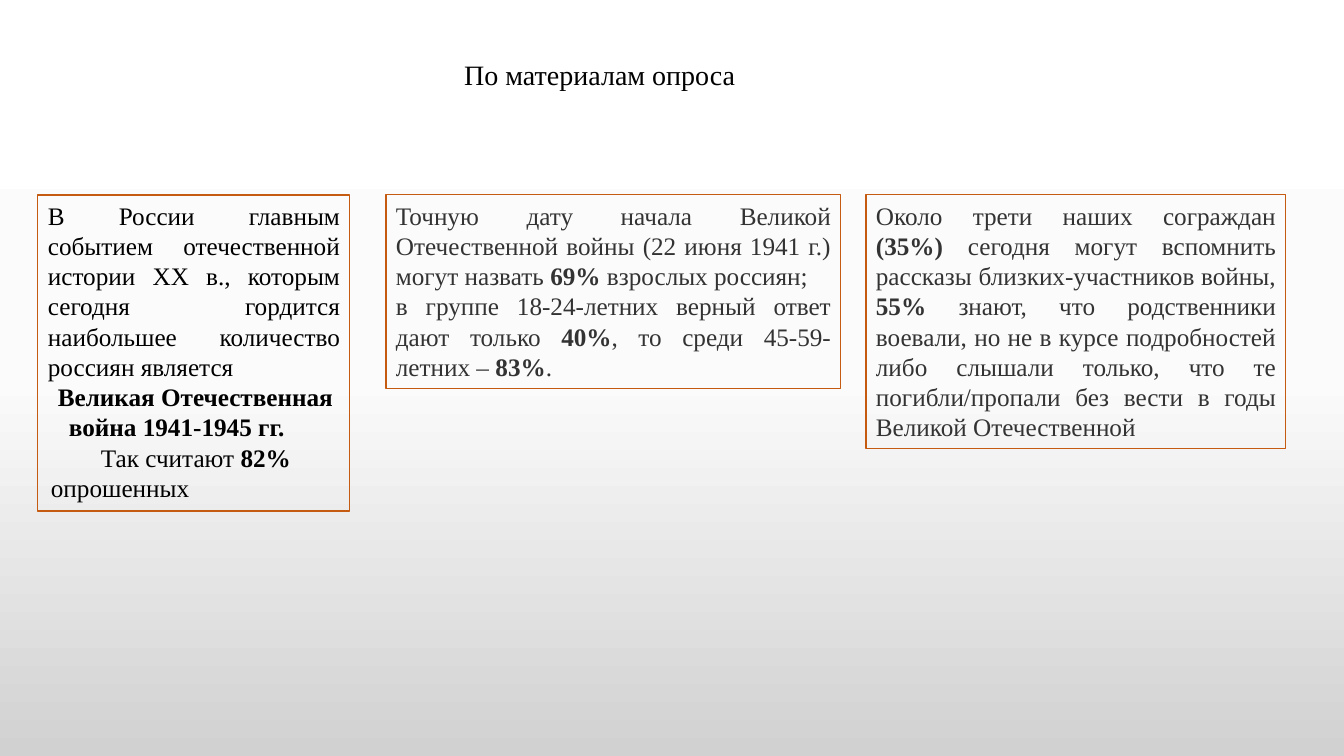
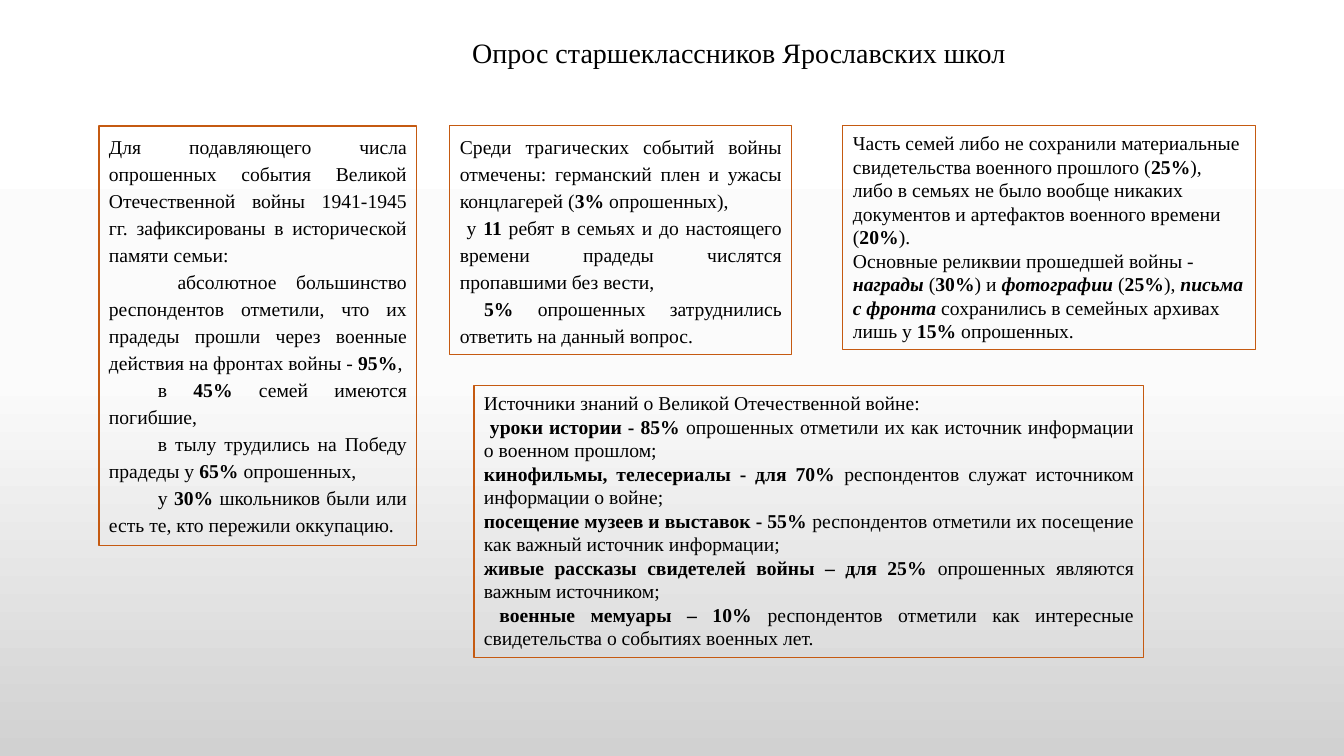
from copy import deepcopy
from pptx import Presentation, util as u
from pptx.dml.color import RGBColor
from pptx.enum import shapes, text

PX = 914400 / 100.8
FONT = "Times New Roman"
EDGE, BLACK, GREY = "C55A11", "000000", "333333"
LEFT, JUST = text.PP_ALIGN.LEFT, text.PP_ALIGN.JUSTIFY


def px(n):
    return u.Emu(round(n * PX))


def write(para, line, size, color):
    """Fill a paragraph; *...* marks bold, */...* bold italic."""
    for i, part in enumerate(line.split("*")):
        if not part:
            continue
        run = para.add_run()
        run.text = part.removeprefix("/") if i % 2 else part
        font = run.font
        font.name, font.size = FONT, u.Pt(size)
        font.bold = bool(i % 2)
        font.italic = bool(i % 2) and part.startswith("/")
        font.color.rgb = RGBColor.from_string(color)


prs = Presentation()
prs.slide_width, prs.slide_height = px(1344), px(756)

# Shared background: white fading to grey
back = prs.slide_master.background.fill
back.gradient()
back.gradient_angle = 270
stops = prs.slide_master.element.find(".//{*}gsLst")
stops.insert(1, deepcopy(stops[0]))
for stop, (pos, tone) in zip(back.gradient_stops,
                             [(0, "FFFFFF"), (0.5, "FBFBFB"), (1, "D1D1D1")]):
    stop.position = pos
    stop.color.rgb = RGBColor.from_string(tone)

# Box: place, colour, alignment, line spacing, paragraphs.
# A paragraph is its text, or text with left margin and first-line indent.
survey = [
    ((38, 195, 312, 316), BLACK, JUST, 1, [
        "В России главным событием отечественной истории ХХ в., которым "
        "сегодня гордится наибольшее количество россиян является ",
        ("*Великая Отечественная война 1941-1945 гг.*", 21, -11),
        ("Так считают *82% *опрошенных", 3, 50),
    ]),
    ((386, 195, 455, 194), GREY, JUST, 1, [
        "Точную дату начала Великой Отечественной войны (22 июня 1941 г.) "
        "могут назвать *69%* взрослых россиян;",
        "в группе 18-24-летних верный ответ дают только *40%*, то среди "
        "45-59-летних – *83%*. ",
    ]),
    ((866, 195, 420, 254), GREY, JUST, 1, [
        "Около трети наших сограждан *(35%) *сегодня могут вспомнить рассказы "
        "близких-участников войны, *55%* знают, что родственники воевали, но "
        "не в курсе подробностей либо слышали только, что те погибли/пропали "
        "без вести в годы Великой Отечественной",
    ]),
]
school = [
    ((99, 126, 318, 420), BLACK, JUST, 1.15, [
        "Для подавляющего числа опрошенных события Великой Отечественной войны "
        "1941-1945 гг. зафиксированы в исторической памяти семьи:",
        (" абсолютное большинство респондентов отметили, что их прадеды прошли "
         "через военные действия на фронтах войны - *95%*,", 0, 49),
        ("в *45%* семей имеются погибшие,", 0, 49),
        ("в тылу трудились на Победу прадеды у *65%* опрошенных, ", 0, 49),
        ("у *30%* школьников были или есть те, кто пережили оккупацию. ", 0, 49),
    ]),
    ((450, 126, 342, 229), BLACK, JUST, 1.15, [
        "Среди трагических событий войны отмечены: германский плен и ужасы "
        "концлагерей (*3%* опрошенных),",
        " у *11 *ребят в семьях и до настоящего времени прадеды числятся "
        "пропавшими без вести,",
        " *5%* опрошенных затруднились ответить на данный вопрос.",
    ]),
    ((843, 126, 413, 224), BLACK, LEFT, 1, [
        "Часть семей либо не сохранили материальные свидетельства военного "
        "прошлого (*25%*), либо в семьях не было вообще никаких документов и "
        "артефактов военного времени (*20%*).",
        "Основные реликвии прошедшей войны - */награды *(*30%*) и "
        "*/фотографии* (*25%*), */письма с фронта *сохранились в семейных "
        "архивах лишь у *15%* опрошенных.",
    ]),
    ((474, 386, 670, 272), BLACK, JUST, 1, [
        "Источники знаний о Великой Отечественной войне:",
        "* уроки истории - 85% *опрошенных отметили их как источник информации "
        "о военном прошлом; ",
        "*кинофильмы, телесериалы - для 70% *респондентов служат источником "
        "информации о войне; ",
        "*посещение музеев и выставок - 55% *респондентов отметили их посещение "
        "как важный источник информации; ",
        "*живые рассказы свидетелей войны – для 25% *опрошенных являются "
        "важным источником;",
        "* военные мемуары – 10% *респондентов отметили как интересные "
        "свидетельства о событиях военных лет. ",
    ]),
]
pages = [
    ("По материалам опроса", (454, 52, 312, 44), 18, survey),
    ("Опрос старшеклассников Ярославских школ", (462, 30, 565, 44), 14, school),
]

for name, place, size, boxes in pages:
    slide = prs.slides.add_slide(prs.slide_layouts[5])
    title = slide.shapes.title
    title.left, title.top, title.width, title.height = map(px, place)
    frame = title.text_frame
    frame.word_wrap = False
    frame.auto_size = text.MSO_AUTO_SIZE.NONE
    frame.vertical_anchor = text.MSO_ANCHOR.TOP
    frame.paragraphs[0].alignment = LEFT
    write(frame.paragraphs[0], name, 20, BLACK)

    for place, color, align, space, lines in boxes:
        box = slide.shapes.add_shape(shapes.MSO_SHAPE.RECTANGLE, *map(px, place))
        box.shadow.inherit = False
        box.fill.background()
        box.line.color.rgb = RGBColor.from_string(EDGE)
        box.line.width = u.Pt(0.75)
        frame = box.text_frame
        frame.word_wrap = True
        frame.auto_size = text.MSO_AUTO_SIZE.SHAPE_TO_FIT_TEXT
        frame.vertical_anchor = text.MSO_ANCHOR.TOP
        for i, line in enumerate(lines):
            para = frame.add_paragraph() if i else frame.paragraphs[0]
            para.alignment, para.line_spacing = align, float(space)
            if isinstance(line, tuple):
                line, margin, indent = line
                props = para._p.get_or_add_pPr()
                props.set("marL", str(px(margin)))
                props.set("indent", str(px(indent)))
                if margin:
                    para.alignment = LEFT
            write(para, line, size, color)

prs.save("out.pptx")
